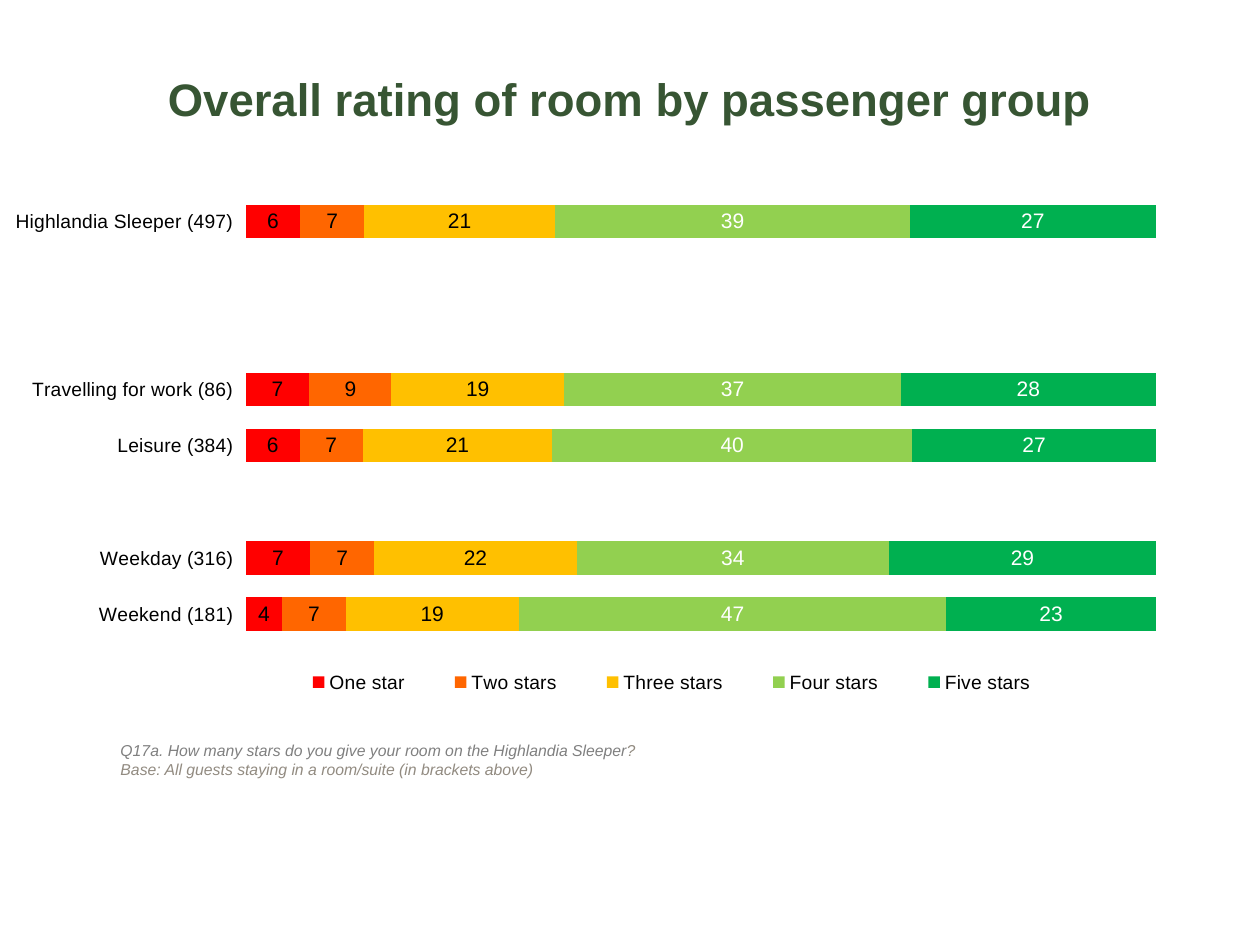
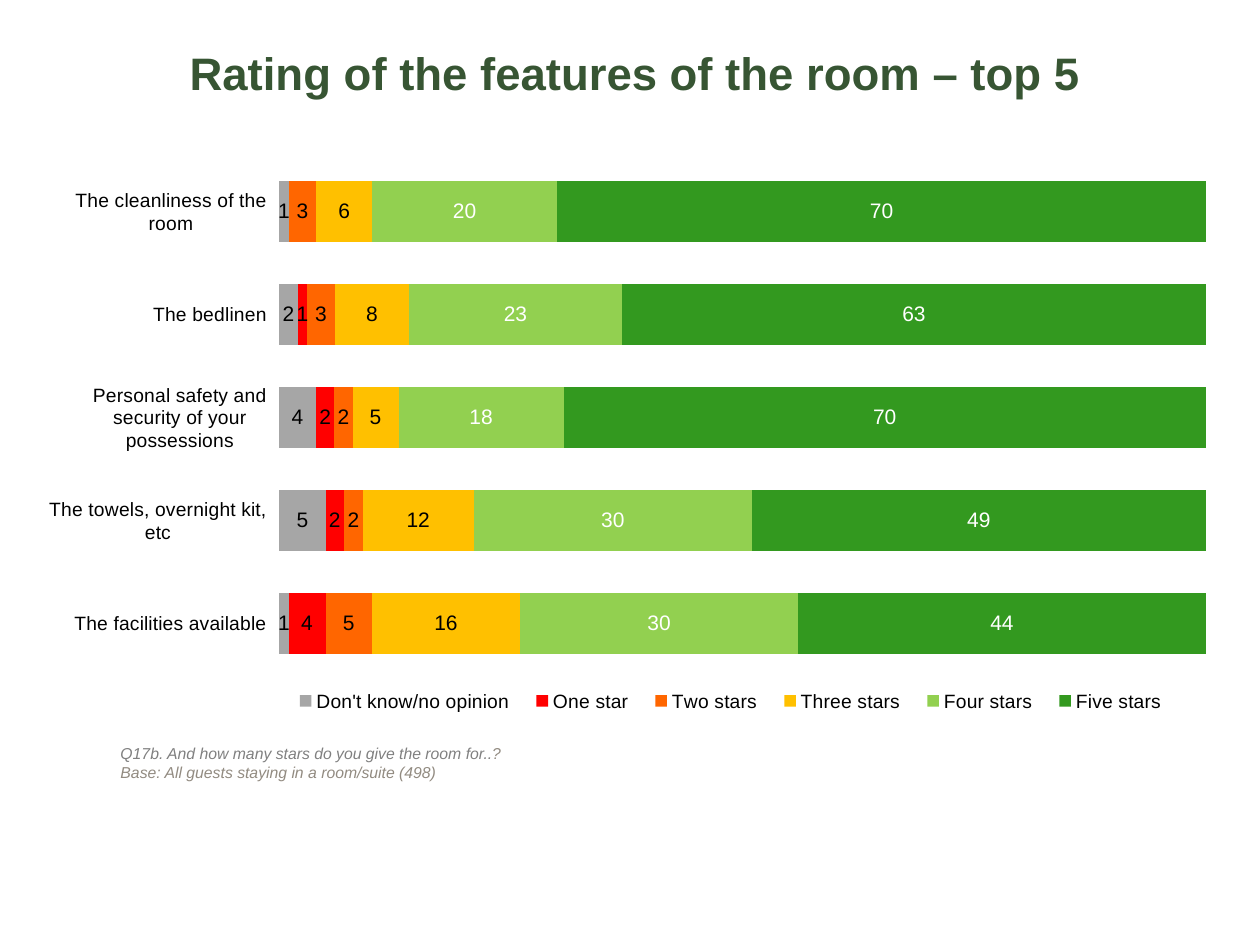
from dataclasses import dataclass

from lxml import etree
from pptx import Presentation
from pptx.chart.chart import Chart
from pptx.chart.data import CategoryChartData
from pptx.dml.color import RGBColor
from pptx.enum.chart import XL_CHART_TYPE, XL_LEGEND_POSITION, XL_TICK_MARK
from pptx.enum.text import PP_ALIGN
from pptx.oxml.ns import qn
from pptx.slide import Slide
from pptx.util import Cm, Pt

STACKED_BARS = XL_CHART_TYPE.BAR_STACKED_100
LEGEND_BOTTOM = XL_LEGEND_POSITION.BOTTOM
TICK_OUTSIDE = XL_TICK_MARK.OUTSIDE
CENTER = PP_ALIGN.CENTER

FONT = "Arial"
BLACK = RGBColor(0x00, 0x00, 0x00)
WHITE = RGBColor(0xFF, 0xFF, 0xFF)
TITLE_GREEN = RGBColor(0x37, 0x55, 0x33)
QUESTION_GREY = RGBColor(0x80, 0x80, 0x80)
BASE_GREY = RGBColor(0x92, 0x8B, 0x81)
GREY = RGBColor(0xA6, 0xA6, 0xA6)
RED = RGBColor(0xFF, 0x00, 0x00)
ORANGE = RGBColor(0xFF, 0x66, 0x00)
AMBER = RGBColor(0xFF, 0xC0, 0x00)
LIGHT_GREEN = RGBColor(0x92, 0xD0, 0x50)
GREEN = RGBColor(0x00, 0xB0, 0x50)
DARK_GREEN = RGBColor(0x33, 0x99, 0x1F)


@dataclass(frozen=True)
class Box:
    """Left, top, width and height in centimetres, or as shares of a chart."""
    left: float
    top: float
    width: float
    height: float

    def lengths(self) -> tuple[Cm, Cm, Cm, Cm]:
        return Cm(self.left), Cm(self.top), Cm(self.width), Cm(self.height)


@dataclass(frozen=True)
class Rating:
    name: str
    color: RGBColor
    values: tuple
    label_color: RGBColor = BLACK


@dataclass(frozen=True)
class RatingSlide:
    title: str
    title_box: Box
    groups: tuple
    ratings: tuple
    chart_box: Box
    plot_area: Box
    legend_area: Box
    question: str
    base: str
    note_top: float


RATING_SLIDES = (
    RatingSlide(
        title="Overall rating of room by passenger group",
        title_box=Box(0, 1.3, 25.4, 1.68),
        groups=("Highlandia Sleeper (497)", "", "", "Travelling for work (86)",
                "Leisure (384)", "", "Weekday (316)", "Weekend (181)"),
        ratings=(
            Rating("One star", RED, (6, None, None, 7, 6, None, 7, 4)),
            Rating("Two stars", ORANGE, (7, None, None, 9, 7, None, 7, 7)),
            Rating("Three stars", AMBER, (21, None, None, 19, 21, None, 22, 19)),
            Rating("Four stars", LIGHT_GREEN, (39, None, None, 37, 40, None, 34, 47), WHITE),
            Rating("Five stars", GREEN, (27, None, None, 28, 27, None, 29, 23), WHITE),
        ),
        chart_box=Box(0.25, 2.16, 23.52, 12.4),
        plot_area=Box(0.2, 0.14, 0.78, 0.73),
        legend_area=Box(0.22, 0.9, 0.69, 0.07),
        question="Q17a. How many stars do you give your room on the Highlandia Sleeper",
        base="Base: All guests staying in a room/suite (in brackets above)",
        note_top=14.81,
    ),
    RatingSlide(
        title="Rating of the features of the room – top 5",
        title_box=Box(1.63, 0.79, 22.35, 1.3),
        groups=("The cleanliness of the room", "The bedlinen",
                "Personal safety and security of your possessions",
                "The towels, overnight kit, etc", "The facilities available"),
        ratings=(
            Rating("Don't know/no opinion", GREY, (1, 2, 4, 5, 1)),
            Rating("One star", RED, (None, 1, 2, 2, 4)),
            Rating("Two stars", ORANGE, (3, 3, 2, 2, 5)),
            Rating("Three stars", AMBER, (6, 8, 5, 12, 16)),
            Rating("Four stars", LIGHT_GREEN, (20, 23, 18, 30, 30), WHITE),
            Rating("Five stars", DARK_GREEN, (70, 63, 70, 49, 44), WHITE),
        ),
        chart_box=Box(0.84, 0.71, 23.95, 14.83),
        plot_area=Box(0.2, 0.17, 0.78, 0.7),
        legend_area=Box(0.2, 0.87, 0.76, 0.07),
        question="Q17b. And how many stars do you give the room for..",
        base="Base: All guests staying in a room/suite (498)",
        note_top=14.86,
    ),
)


def manual_layout(area: Box, inner: bool = False):
    """Build a c:layout element that fixes a chart part to an area."""
    layout = etree.Element(qn("c:layout"))
    manual = etree.SubElement(layout, qn("c:manualLayout"))
    settings = [("layoutTarget", "inner")] if inner else []
    settings += [("xMode", "edge"), ("yMode", "edge"), ("x", area.left),
                 ("y", area.top), ("w", area.width), ("h", area.height)]
    for tag, value in settings:
        etree.SubElement(manual, qn(f"c:{tag}")).set("val", str(value))
    return layout


def place_parts(chart: Chart, content: RatingSlide) -> None:
    plot_area = chart._chartSpace.find(f".//{qn('c:plotArea')}")
    for automatic in plot_area.findall(qn("c:layout")):
        plot_area.remove(automatic)
    plot_area.insert(0, manual_layout(content.plot_area, inner=True))
    legend_position = chart._chartSpace.find(f".//{qn('c:legendPos')}")
    legend_position.addnext(manual_layout(content.legend_area))


def add_rating_chart(slide: Slide, content: RatingSlide) -> None:
    data = CategoryChartData()
    data.categories = content.groups
    for rating in content.ratings:
        data.add_series(rating.name, rating.values)
    chart = slide.shapes.add_chart(STACKED_BARS, *content.chart_box.lengths(), data).chart
    chart.has_title = False
    chart.font.name = FONT
    chart.font.size = Pt(18)
    chart.font.color.rgb = BLACK

    # Axes
    groups_axis = chart.category_axis
    groups_axis.reverse_order = True
    groups_axis.major_tick_mark = TICK_OUTSIDE
    groups_axis.format.line.fill.background()
    groups_axis.tick_labels.font.size = Pt(11)
    groups_axis.tick_labels.font.name = FONT
    chart.value_axis.has_major_gridlines = False
    chart.value_axis.visible = False

    # Bars and their values
    bars = chart.plots[0]
    bars.gap_width = 68
    bars.overlap = 100
    bars.vary_by_categories = False
    for series, rating in zip(bars.series, content.ratings):
        series.format.fill.solid()
        series.format.fill.fore_color.rgb = rating.color
        labels = series.data_labels
        labels.show_value = True
        labels.font.size = Pt(12)
        labels.font.name = FONT
        labels.font.color.rgb = rating.label_color

    # Legend
    chart.has_legend = True
    chart.legend.position = LEGEND_BOTTOM
    chart.legend.include_in_layout = False
    chart.legend.font.size = Pt(11)
    chart.legend.font.name = FONT
    place_parts(chart, content)


def add_title(slide: Slide, content: RatingSlide) -> None:
    frame = slide.shapes.add_textbox(*content.title_box.lengths()).text_frame
    frame.word_wrap = True
    title = frame.paragraphs[0]
    title.text = content.title
    title.alignment = CENTER
    title.font.name = FONT
    title.font.size = Pt(26)
    title.font.bold = True
    title.font.color.rgb = TITLE_GREEN


def add_note(slide: Slide, content: RatingSlide) -> None:
    note_box = Box(2.18, content.note_top, 19.63, 1.02)
    frame = slide.shapes.add_textbox(*note_box.lengths()).text_frame
    frame.word_wrap = True
    lines = (
        ((content.question, QUESTION_GREY), ("?", BASE_GREY)),
        ((content.base, BASE_GREY),),
    )
    for index, pieces in enumerate(lines):
        line = frame.add_paragraph() if index else frame.paragraphs[0]
        line.font.name = FONT
        line.font.size = Pt(9)
        line.font.italic = True
        for text, color in pieces:
            run = line.add_run()
            run.text = text
            run.font.color.rgb = color


def main() -> None:
    presentation = Presentation()
    presentation.slide_width = Cm(25.4)
    presentation.slide_height = Cm(19.05)
    blank = presentation.slide_layouts[6]
    for content in RATING_SLIDES:
        slide = presentation.slides.add_slide(blank)
        add_rating_chart(slide, content)
        add_title(slide, content)
        add_note(slide, content)
    presentation.save("out.pptx")


if __name__ == "__main__":
    main()
